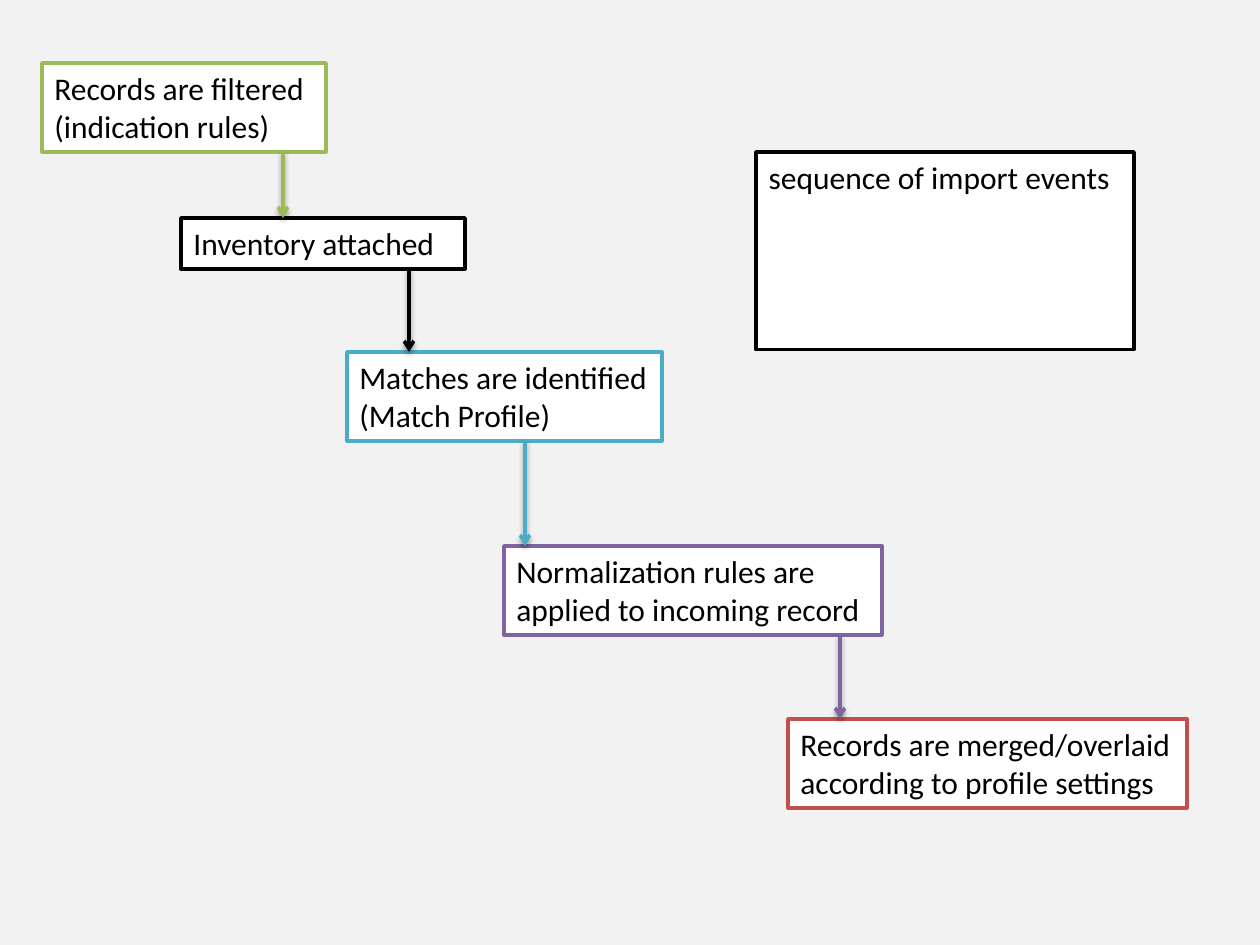
from dataclasses import dataclass
from itertools import pairwise

from lxml.etree import SubElement
from pptx import Presentation
from pptx.dml.color import RGBColor
from pptx.enum.shapes import MSO_CONNECTOR
from pptx.enum.text import MSO_ANCHOR, MSO_AUTO_SIZE, PP_ALIGN
from pptx.oxml import parse_xml
from pptx.oxml.ns import nsdecls, qn
from pptx.util import Emu, Pt

PX = 914400 / 126
WIDTH, HEIGHT = 1260, 945
ONE_LINE, TWO_LINES = 51, 89
COLORS = {
    "background": "F2F2F2",
    "box": "FFFFFF",
    "black": "000000",
    "green": "9BBB59",
    "teal": "4BACC6",
    "purple": "8064A2",
    "red": "C0504D",
}


@dataclass(frozen=True)
class Step:
    text: str
    left: int
    top: int
    width: int
    height: int
    color: str
    arrow_x: int = 0  # where the arrow to the next step leaves

    @property
    def bottom(self) -> int:
        return self.top + self.height


HEADING = Step("sequence of import events", 756, 152, 378, ONE_LINE, "black")
STEPS = [
    Step("Records are filtered (indication rules)", 42, 63, 284, TWO_LINES, "green", 283),
    Step("Inventory attached", 181, 218, 284, ONE_LINE, "black", 409),
    Step("Matches are identified (Match Profile)", 347, 352, 315, TWO_LINES, "teal", 525),
    Step("Normalization rules are applied to incoming record", 504, 546, 378, TWO_LINES, "purple", 840),
    Step("Records are merged/overlaid according to profile settings", 788, 719, 399, TWO_LINES, "red"),
]


def px(value: int) -> Emu:
    return Emu(round(value * PX))


def rgb(name: str) -> RGBColor:
    return RGBColor.from_string(COLORS[name])


def write_text(frame, text: str, *, size: int = 18, color: str = "black", font: str = "Calibri") -> None:
    frame.word_wrap = True
    frame.auto_size = MSO_AUTO_SIZE.SHAPE_TO_FIT_TEXT
    frame.vertical_anchor = MSO_ANCHOR.TOP
    paragraph = frame.paragraphs[0]
    paragraph.alignment = PP_ALIGN.LEFT
    run = paragraph.add_run()
    run.text = text
    run.font.size = Pt(size)
    run.font.name = font
    run.font.color.rgb = rgb(color)


def format_box(box, step: Step) -> None:
    """Place a text box or placeholder and give it fill, outline and text."""
    box.left, box.top = px(step.left), px(step.top)
    box.width, box.height = px(step.width), px(step.height)
    box.fill.solid()
    box.fill.fore_color.rgb = rgb("box")
    box.line.color.rgb = rgb(step.color)
    box.line.width = Pt(2)
    write_text(box.text_frame, step.text)


def add_arrow(slide, start: Step, end: Step) -> None:
    arrow = slide.shapes.add_connector(
        MSO_CONNECTOR.STRAIGHT,
        px(start.arrow_x), px(start.bottom), px(start.arrow_x), px(end.top),
    )
    arrow.line.color.rgb = rgb(start.color)
    arrow.line.width = Pt(2)
    SubElement(arrow.line._get_or_add_ln(), qn("a:tailEnd"), type="arrow")
    arrow._element.spPr.append(parse_xml(
        f'<a:effectLst {nsdecls("a")}>'
        '<a:outerShdw blurRad="40000" dist="20000" dir="5400000" rotWithShape="0">'
        f'<a:srgbClr val="{COLORS["black"]}"><a:alpha val="38000"/></a:srgbClr>'
        '</a:outerShdw></a:effectLst>'
    ))


def main() -> None:
    deck = Presentation()
    deck.slide_width, deck.slide_height = px(WIDTH), px(HEIGHT)
    title_only = deck.slide_layouts[5]
    slide = deck.slides.add_slide(title_only)
    slide.background.fill.solid()
    slide.background.fill.fore_color.rgb = rgb("background")

    format_box(slide.shapes.title, HEADING)
    for step in STEPS:
        format_box(slide.shapes.add_textbox(0, 0, 0, 0), step)
    for start, end in pairwise(STEPS):
        add_arrow(slide, start, end)
    deck.save("out.pptx")


if __name__ == "__main__":
    main()
